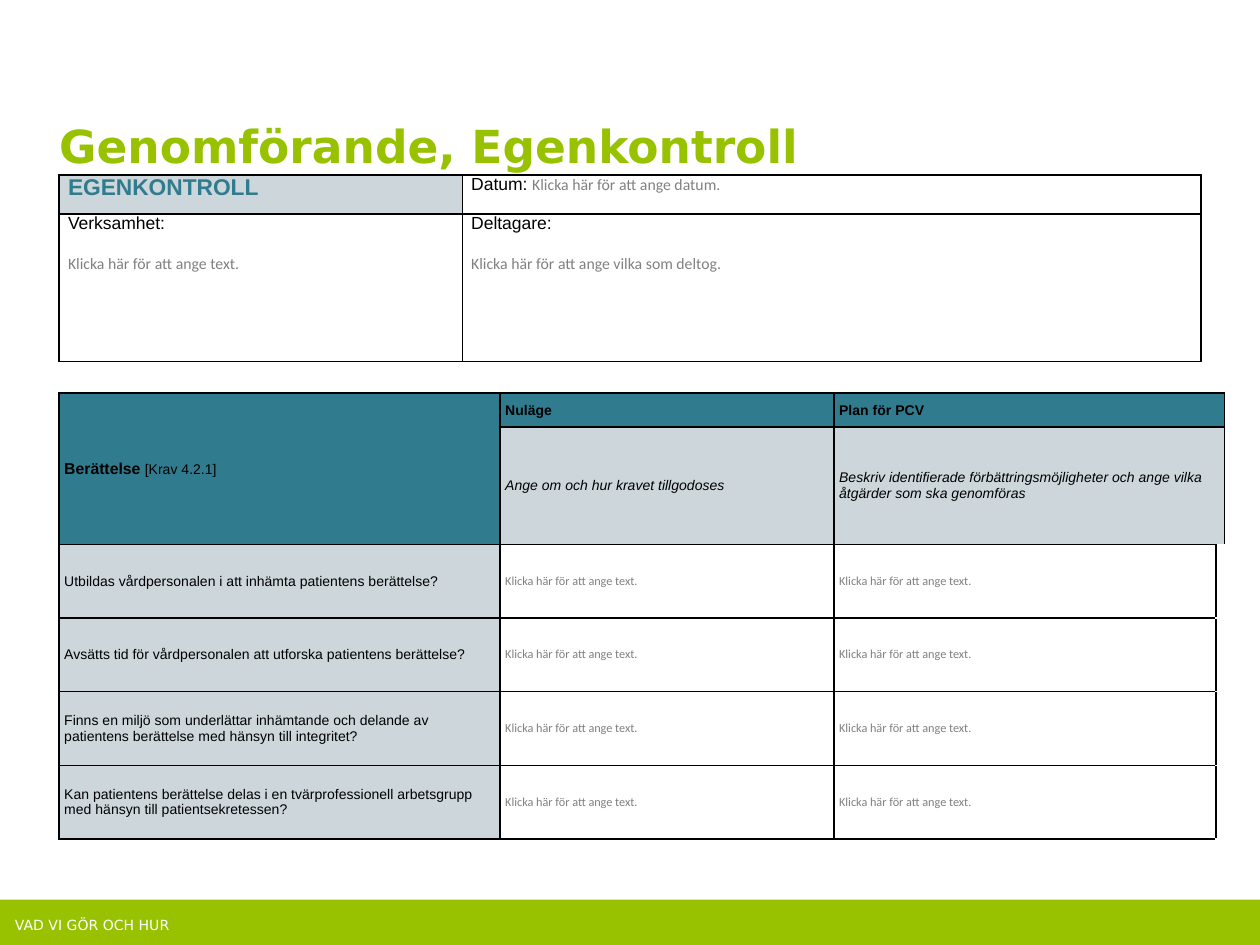
from dataclasses import dataclass

from lxml.etree import SubElement
from pptx import Presentation
from pptx.dml.color import RGBColor
from pptx.enum.shapes import MSO_SHAPE
from pptx.enum.text import MSO_ANCHOR, PP_ALIGN
from pptx.oxml.ns import qn
from pptx.util import Inches, Pt


@dataclass(frozen=True)
class Theme:
    green: str = "98C200"
    teal: str = "307C8E"
    mist: str = "CDD7DB"
    white: str = "FFFFFF"
    black: str = "000000"
    grey: str = "808080"
    display: str = "DejaVu Sans"
    body: str = "Arial"
    prompt: str = "Calibri"
    title_size: int = 26
    heading_size: int = 13
    label_size: int = 10
    section_size: int = 9
    small_size: int = 8
    hint_size: int = 7
    thin: float = 1
    thick: float = 1.5


THEME = Theme()
PROMPT = "Klicka här för att ange text."
QUESTIONS = [
    "Utbildas vårdpersonalen i att inhämta patientens berättelse?",
    "Avsätts tid för vårdpersonalen att utforska patientens berättelse?",
    "Finns en miljö som underlättar inhämtande och delande av patientens "
    "berättelse med hänsyn till integritet?",
    "Kan patientens berättelse delas i en tvärprofessionell arbetsgrupp "
    "med hänsyn till patientsekretessen?",
]


def add_run(paragraph, text, size, color=THEME.black, font=THEME.body,
            bold=False, italic=False):
    run = paragraph.add_run()
    run.text = text
    run.font.size = Pt(size)
    run.font.name = font
    run.font.bold = bold
    run.font.italic = italic
    run.font.color.rgb = RGBColor.from_string(color)


def add_prompt(paragraph, text, size):
    add_run(paragraph, text, size, THEME.grey, THEME.prompt)


def set_borders(cell, **widths):
    properties = cell._tc.get_or_add_tcPr()
    for side in "LRTB":
        if side in widths:
            line = SubElement(properties, qn(f"a:ln{side}"), w=str(Pt(widths[side])))
            fill = SubElement(line, qn("a:solidFill"))
            SubElement(fill, qn("a:srgbClr"), val=THEME.black)


def style_cell(cell, inset, anchor, fill=None):
    cell.margin_left = cell.margin_right = Inches(inset)
    cell.margin_top = cell.margin_bottom = 0
    cell.vertical_anchor = anchor
    if fill:
        cell.fill.solid()
        cell.fill.fore_color.rgb = RGBColor.from_string(fill)
    else:
        cell.fill.background()


def add_grid(slide, left, top, widths, heights):
    frame = slide.shapes.add_table(len(heights), len(widths), Inches(left), Inches(top),
                                   Inches(sum(widths)), Inches(sum(heights)))
    grid = frame.table
    grid.first_row = grid.horz_banding = False
    for column, width in zip(grid.columns, widths):
        column.width = Inches(width)
    for row, height in zip(grid.rows, heights):
        row.height = Inches(height)
    return grid


def add_title(slide):
    title = slide.shapes.title
    title.left, title.top = Inches(0.47), Inches(0.92)
    title.width, title.height = Inches(8.46), Inches(0.47)
    frame = title.text_frame
    frame.margin_left = frame.margin_right = frame.margin_top = frame.margin_bottom = 0
    frame.vertical_anchor = MSO_ANCHOR.MIDDLE
    frame.paragraphs[0].alignment = PP_ALIGN.LEFT
    add_run(frame.paragraphs[0], "Genomförande, Egenkontroll", THEME.title_size,
            THEME.green, THEME.display, bold=True)


def add_footer(slide):
    band = slide.shapes.add_shape(MSO_SHAPE.RECTANGLE, 0, Inches(7.14),
                                  Inches(10), Inches(0.36))
    band.shadow.inherit = False
    band.fill.solid()
    band.fill.fore_color.rgb = RGBColor.from_string(THEME.green)
    band.line.fill.background()
    caption = slide.shapes.add_textbox(Inches(0.02), Inches(7.21), Inches(1.54), Inches(0.25))
    caption.text_frame.word_wrap = True
    paragraph = caption.text_frame.paragraphs[0]
    paragraph.line_spacing = 1.1
    add_run(paragraph, "VAD VI GÖR OCH HUR", THEME.small_size, THEME.white, THEME.display)


def add_field(cell, label, prompt):
    frame = cell.text_frame
    frame.paragraphs[0].space_after = Pt(6)
    add_run(frame.paragraphs[0], label, THEME.label_size)
    answer = frame.add_paragraph()
    answer.space_before = answer.space_after = Pt(6)
    add_prompt(answer, prompt, THEME.section_size)


def add_meeting_table(slide):
    meeting = add_grid(slide, 0.47, 1.39, [3.2, 5.86], [0.31, 1.17])
    for cell in meeting.iter_cells():
        set_borders(cell, L=THEME.thin, R=THEME.thin, T=THEME.thin, B=THEME.thin)
        style_cell(cell, 0.07, MSO_ANCHOR.TOP, THEME.white)
    heading, date = meeting.cell(0, 0), meeting.cell(0, 1)
    style_cell(heading, 0.07, MSO_ANCHOR.TOP, THEME.mist)
    add_run(heading.text_frame.paragraphs[0], "EGENKONTROLL", THEME.heading_size,
            THEME.teal, bold=True)
    date_line = date.text_frame.paragraphs[0]
    add_run(date_line, "Datum: ", THEME.label_size)
    add_prompt(date_line, "Klicka här för att ange datum.", THEME.section_size)
    add_field(meeting.cell(1, 0), "Verksamhet:", PROMPT)
    add_field(meeting.cell(1, 1), "Deltagare:", "Klicka här för att ange vilka som deltog.")


def format_review_cell(cell, row, column):
    in_header = row < 2
    if column == 3 and not in_header:
        set_borders(cell, L=THEME.thick)
        style_cell(cell, 0, MSO_ANCHOR.MIDDLE)
        return
    last_column = 3 if in_header else 2
    set_borders(cell,
                L=THEME.thick if column == 0 else THEME.thin,
                R=THEME.thick if column == last_column else THEME.thin,
                T=THEME.thick if row == 0 else THEME.thin,
                B=THEME.thin)
    if row == 0 or (row == 1 and column == 0):
        fill = THEME.teal
    else:
        fill = THEME.mist if in_header or column == 0 else None
    style_cell(cell, 0.04, MSO_ANCHOR.MIDDLE, fill)


def add_review_table(slide):
    header_heights = [0.27, 0.93]
    question_height = (3.54 - sum(header_heights)) / len(QUESTIONS)
    review = add_grid(slide, 0.47, 3.12, [3.5, 2.65, 3.03, 0.07],
                      header_heights + [question_height] * len(QUESTIONS))
    for row in range(len(review.rows)):
        for column in range(len(review.columns)):
            format_review_cell(review.cell(row, column), row, column)
    review.cell(0, 0).merge(review.cell(1, 0))
    for row in range(2):
        review.cell(row, 2).merge(review.cell(row, 3))

    def line(row, column):
        return review.cell(row, column).text_frame.paragraphs[0]

    add_run(line(0, 0), "Berättelse ", THEME.section_size, bold=True)
    add_run(line(0, 0), "[Krav 4.2.1]", THEME.small_size)
    columns = [("Nuläge", "Ange om och hur kravet tillgodoses"),
               ("Plan för PCV", "Beskriv identifierade förbättringsmöjligheter och ange "
                                "vilka åtgärder som ska genomföras")]
    for column, (heading, guidance) in enumerate(columns, 1):
        add_run(line(0, column), heading, THEME.small_size, bold=True)
        add_run(line(1, column), guidance, THEME.small_size, italic=True)
    for row, question in enumerate(QUESTIONS, 2):
        add_run(line(row, 0), question, THEME.small_size)
        for column in (1, 2):
            add_prompt(line(row, column), PROMPT, THEME.hint_size)


def main():
    deck = Presentation()
    deck.slide_width, deck.slide_height = Inches(10), Inches(7.5)
    slide = deck.slides.add_slide(deck.slide_layouts[5])
    add_footer(slide)
    add_meeting_table(slide)
    add_title(slide)
    add_review_table(slide)
    deck.save("out.pptx")


if __name__ == "__main__":
    main()
